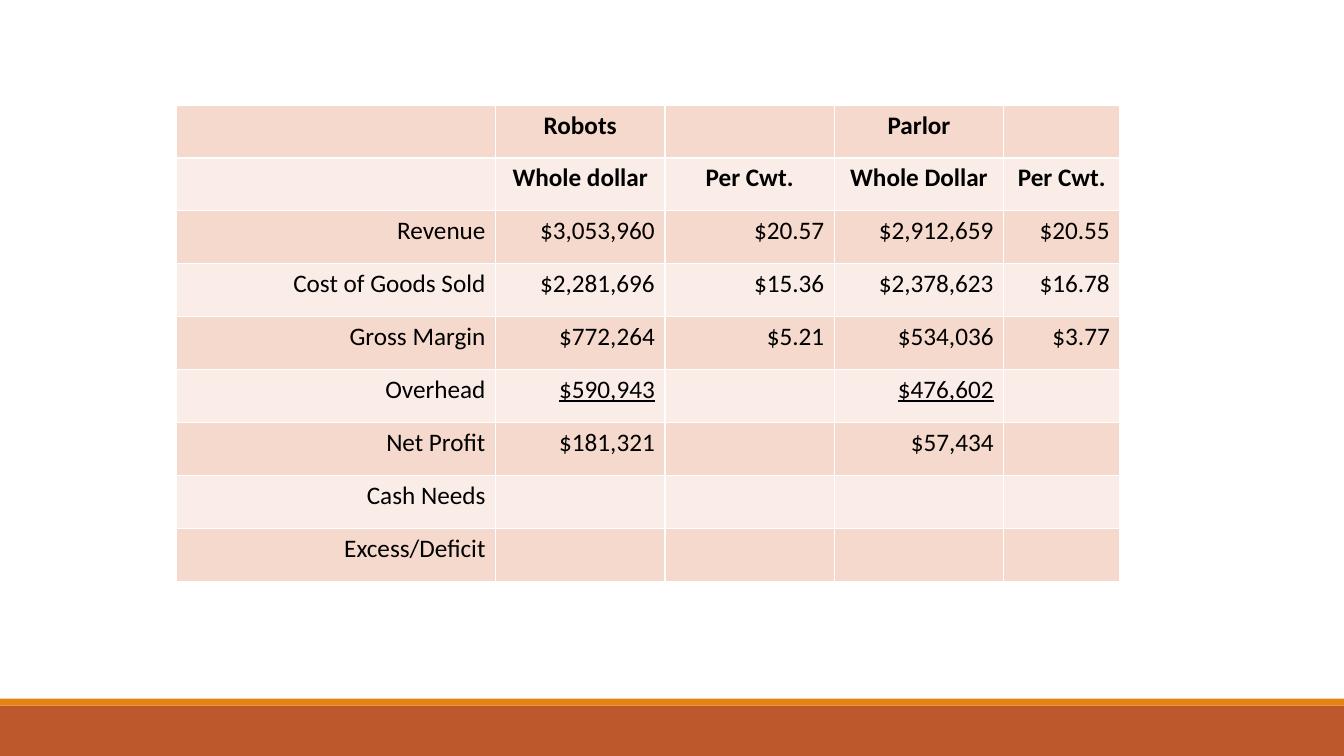
from dataclasses import dataclass

import lxml.etree
import pptx
import pptx.dml.color
import pptx.enum.shapes
import pptx.enum.text
import pptx.oxml.ns
import pptx.util

Pt = pptx.util.Pt
RGBColor = pptx.dml.color.RGBColor
Align = pptx.enum.text.PP_ALIGN

WHITE = RGBColor(0xFF, 0xFF, 0xFF)
BLACK = RGBColor(0x00, 0x00, 0x00)
RUST = RGBColor(0xBD, 0x58, 0x2C)
ORANGE = RGBColor(0xE4, 0x83, 0x12)
DARK_ROW = RGBColor(0xF5, 0xD9, 0xCC)
LIGHT_ROW = RGBColor(0xFA, 0xED, 0xE7)

SLIDE_WIDTH, SLIDE_HEIGHT = 960, 540
TABLE_LEFT, TABLE_TOP = 126, 75
COLUMN_WIDTHS = (228, 121, 121, 121, 83)
ROW_HEIGHT = 37.8


@dataclass(frozen=True)
class Band:
    top: float
    height: float
    color: RGBColor


@dataclass(frozen=True)
class Row:
    texts: tuple[str, ...]
    header: bool = False
    underlined_values: bool = False


BANDS = (Band(504, 36, RUST), Band(499, 5, ORANGE))

ROWS = (
    Row(("", "Robots", "", "Parlor", ""), header=True),
    Row(("", "Whole dollar", "Per Cwt.", "Whole Dollar", "Per Cwt."), header=True),
    Row(("Revenue", "$3,053,960", "$20.57", "$2,912,659", "$20.55")),
    Row(("Cost of Goods Sold", "$2,281,696", "$15.36", "$2,378,623", "$16.78")),
    Row(("Gross Margin", "$772,264", "$5.21", "$534,036", "$3.77")),
    Row(("Overhead", "$590,943", "", "$476,602", ""), underlined_values=True),
    Row(("Net Profit", "$181,321", "", "$57,434", "")),
    Row(("Cash Needs", "", "", "", "")),
    Row(("Excess/Deficit", "", "", "", "")),
)


def draw_band(slide: pptx.slide.Slide, band: Band) -> None:
    shape = slide.shapes.add_shape(
        pptx.enum.shapes.MSO_SHAPE.RECTANGLE,
        Pt(0), Pt(band.top), Pt(SLIDE_WIDTH), Pt(band.height),
    )
    shape.shadow.inherit = False
    shape.fill.solid()
    shape.fill.fore_color.rgb = band.color
    shape.line.fill.background()


def add_borders(cell: pptx.table._Cell, color: RGBColor, width: float) -> None:
    qualify = pptx.oxml.ns.qn
    properties = cell._tc.get_or_add_tcPr()
    for side in ("a:lnL", "a:lnR", "a:lnT", "a:lnB"):
        line = lxml.etree.SubElement(properties, qualify(side), w=str(Pt(width)))
        fill = lxml.etree.SubElement(line, qualify("a:solidFill"))
        lxml.etree.SubElement(fill, qualify("a:srgbClr"), val=str(color))


def fill_cell(cell: pptx.table._Cell, text: str, row: Row,
              color: RGBColor, underline: bool) -> None:
    add_borders(cell, WHITE, 1)
    cell.fill.solid()
    cell.fill.fore_color.rgb = color
    cell.text = text
    paragraph = cell.text_frame.paragraphs[0]
    paragraph.alignment = Align.CENTER if row.header else Align.RIGHT
    font = paragraph.font
    font.name = "Calibri"
    font.size = Pt(18)
    font.bold = row.header
    font.underline = underline
    font.color.rgb = BLACK


def draw_table(slide: pptx.slide.Slide, rows: tuple[Row, ...]) -> None:
    table = slide.shapes.add_table(
        len(rows), len(COLUMN_WIDTHS), Pt(TABLE_LEFT), Pt(TABLE_TOP),
        Pt(sum(COLUMN_WIDTHS)), Pt(ROW_HEIGHT * len(rows)),
    ).table
    table.first_row = False
    table.horz_banding = False
    for column, width in zip(table.columns, COLUMN_WIDTHS):
        column.width = Pt(width)
    for row_index, row in enumerate(rows):
        table.rows[row_index].height = Pt(ROW_HEIGHT)
        color = LIGHT_ROW if row_index % 2 else DARK_ROW
        for column_index, text in enumerate(row.texts):
            underline = row.underlined_values and column_index > 0
            fill_cell(table.cell(row_index, column_index), text, row, color, underline)


def main() -> None:
    presentation = pptx.Presentation()
    presentation.slide_width = Pt(SLIDE_WIDTH)
    presentation.slide_height = Pt(SLIDE_HEIGHT)
    slide = presentation.slides.add_slide(presentation.slide_layouts[6])

    # Footer bands
    for band in BANDS:
        draw_band(slide, band)

    # Comparison of robots and parlor
    draw_table(slide, ROWS)

    presentation.save("out.pptx")


if __name__ == "__main__":
    main()
